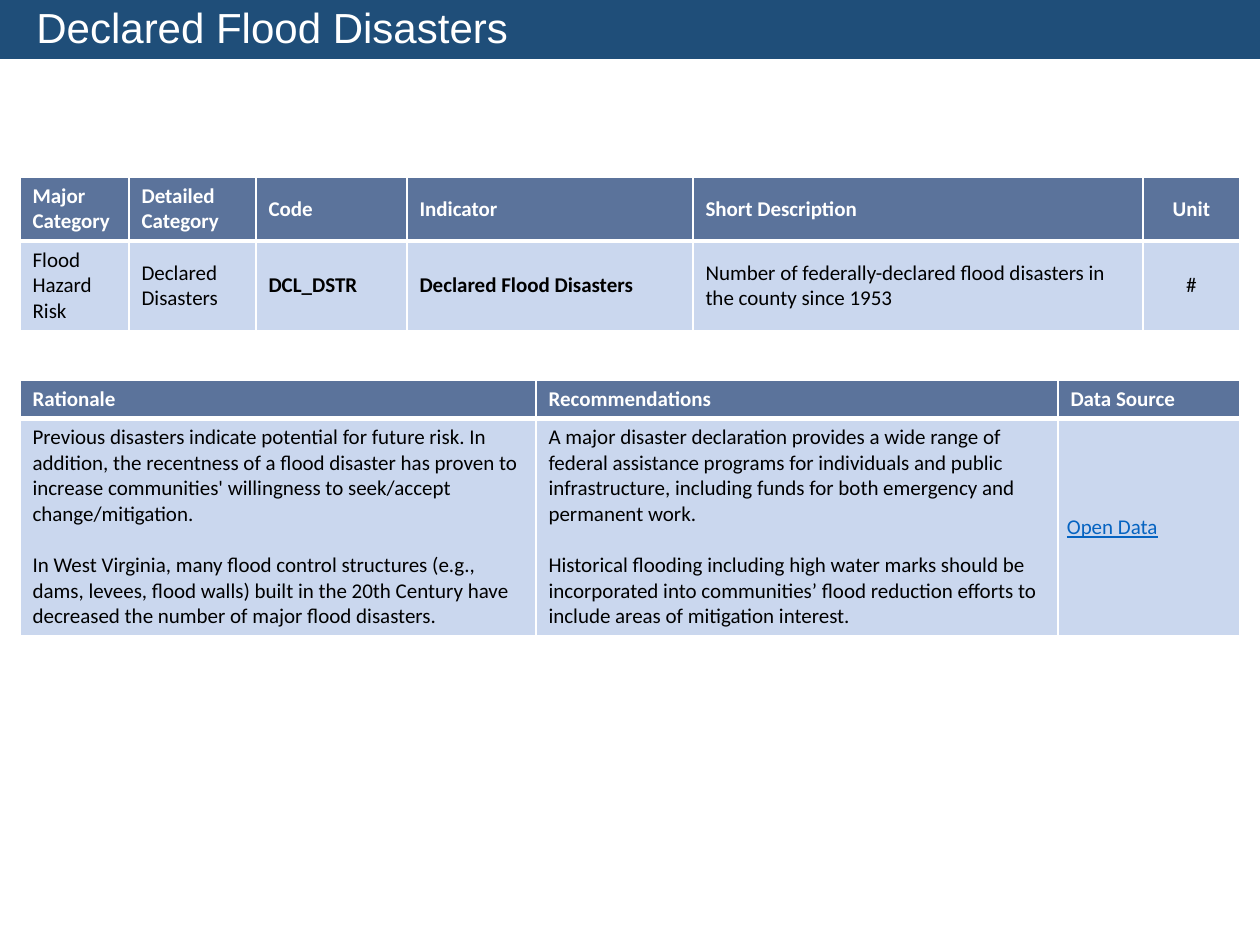
from lxml.etree import SubElement
from pptx import Presentation
from pptx.dml.color import RGBColor
from pptx.enum.shapes import MSO_SHAPE as Shape
from pptx.enum.text import MSO_ANCHOR as Anchor, PP_ALIGN as Align
from pptx.oxml.ns import qn
from pptx.util import Emu, Pt

PX_PER_INCH = 126
WHITE, BLACK = "FFFFFF", "000000"
BANNER, HEADER, BODY, LINK = "1F4E79", "5B739B", "CAD7EE", "0563C1"


def px(length):
    return Emu(round(length * 914400 / PX_PER_INCH))


def color(value):
    return RGBColor.from_string(value)


class SlideBuilder:
    table_font = "Calibri"
    table_size = 12
    title_font = "Arial"
    title_size = 24
    paragraph_gap = 14.6

    def __init__(self, slide):
        self.slide = slide

    def format_runs(self, paragraph, font, size, ink, bold=False, underline=False):
        for run in paragraph.runs:
            run.font.name = font
            run.font.size = Pt(size)
            run.font.bold = bold
            run.font.underline = underline
            run.font.color.rgb = color(ink)

    def banner(self, text, left, top, width, height):
        shape = self.slide.shapes.add_shape(
            Shape.RECTANGLE, px(left), px(top), px(width), px(height))
        shape.shadow.inherit = False
        shape.fill.solid()
        shape.fill.fore_color.rgb = color(BANNER)
        shape.line.fill.background()
        text_frame = shape.text_frame
        text_frame.word_wrap = True
        text_frame.vertical_anchor = Anchor.BOTTOM
        text_frame.text = text
        paragraph = text_frame.paragraphs[0]
        paragraph.alignment = Align.LEFT
        paragraph.line_spacing = 0.9
        properties = paragraph._p.get_or_add_pPr()
        properties.set("marL", str(px(24)))
        properties.set("indent", "0")
        self.format_runs(paragraph, self.title_font, self.title_size, WHITE)

    def borders(self, cell, top, bottom):
        properties = cell._tc.get_or_add_tcPr()
        for side, points in (("L", 1), ("R", 1), ("T", top), ("B", bottom)):
            line = SubElement(properties, qn(f"a:ln{side}"), w=str(Pt(points)))
            fill = SubElement(line, qn("a:solidFill"))
            SubElement(fill, qn("a:srgbClr"), val=WHITE)

    def cell(self, cell, text, is_header, bold, centered, is_link):
        self.borders(cell, *((1, 3) if is_header else (3, 1)))
        cell.fill.solid()
        cell.fill.fore_color.rgb = color(HEADER if is_header else BODY)
        cell.vertical_anchor = Anchor.MIDDLE
        cell.text_frame.text = text
        if is_link:
            cell.margin_left = cell.margin_right = px(9)
            cell.margin_top = cell.margin_bottom = 0
        ink = WHITE if is_header else LINK if is_link else BLACK
        for index, paragraph in enumerate(cell.text_frame.paragraphs):
            paragraph.alignment = Align.CENTER if centered else Align.LEFT
            if is_link:
                paragraph.line_spacing = 1.07
            if index:
                paragraph.space_before = Pt(self.paragraph_gap)
            self.format_runs(paragraph, self.table_font, self.table_size,
                             ink, bold, is_link)

    def table(self, left, top, widths, heights, rows, bold=(), centered=(), links=()):
        table = self.slide.shapes.add_table(
            len(rows), len(widths), px(left), px(top),
            px(sum(widths)), px(sum(heights))).table
        for column, width in zip(table.columns, widths):
            column.width = px(width)
        for row, height in zip(table.rows, heights):
            row.height = px(height)
        for row_index, texts in enumerate(rows):
            is_header = row_index == 0
            for column_index, text in enumerate(texts):
                self.cell(table.cell(row_index, column_index), text, is_header,
                          is_header or column_index in bold,
                          column_index in centered,
                          not is_header and column_index in links)


def main():
    presentation = Presentation()
    presentation.slide_width = px(1260)
    presentation.slide_height = px(945)
    builder = SlideBuilder(presentation.slides.add_slide(presentation.slide_layouts[6]))

    indicator_rows = [
        ["Major Category", "Detailed Category", "Code", "Indicator",
         "Short Description", "Unit"],
        ["Flood Hazard Risk", "Declared Disasters", "DCL_DSTR",
         "Declared Flood Disasters",
         "Number of federally-declared flood disasters in the county since 1953",
         "#"],
    ]
    rationale = (
        "Previous disasters indicate potential for future risk. In addition, the "
        "recentness of a flood disaster has proven to increase communities' "
        "willingness to seek/accept change/mitigation.\n"
        "In West Virginia, many flood control structures (e.g., dams, levees, flood "
        "walls) built in the 20th Century have decreased the number of major flood "
        "disasters.")
    recommendations = (
        "A major disaster declaration provides a wide range of federal assistance "
        "programs for individuals and public infrastructure, including funds for "
        "both emergency and permanent work.\n"
        "Historical flooding including high water marks should be incorporated into "
        "communities’ flood reduction efforts to include areas of mitigation "
        "interest.")
    rationale_rows = [
        ["Rationale", "Recommendations", "Data Source"],
        [rationale, recommendations, "Open Data"],
    ]

    builder.table(20, 177, [109, 127, 151, 286, 450, 97], [64, 88],
                  indicator_rows, bold=(2, 3), centered=(5,))
    builder.table(20, 380, [516, 522, 182], [38, 217], rationale_rows, links=(2,))
    builder.banner("Declared Flood Disasters", 0, 0, 1260, 59)
    presentation.save("out.pptx")


if __name__ == "__main__":
    main()
